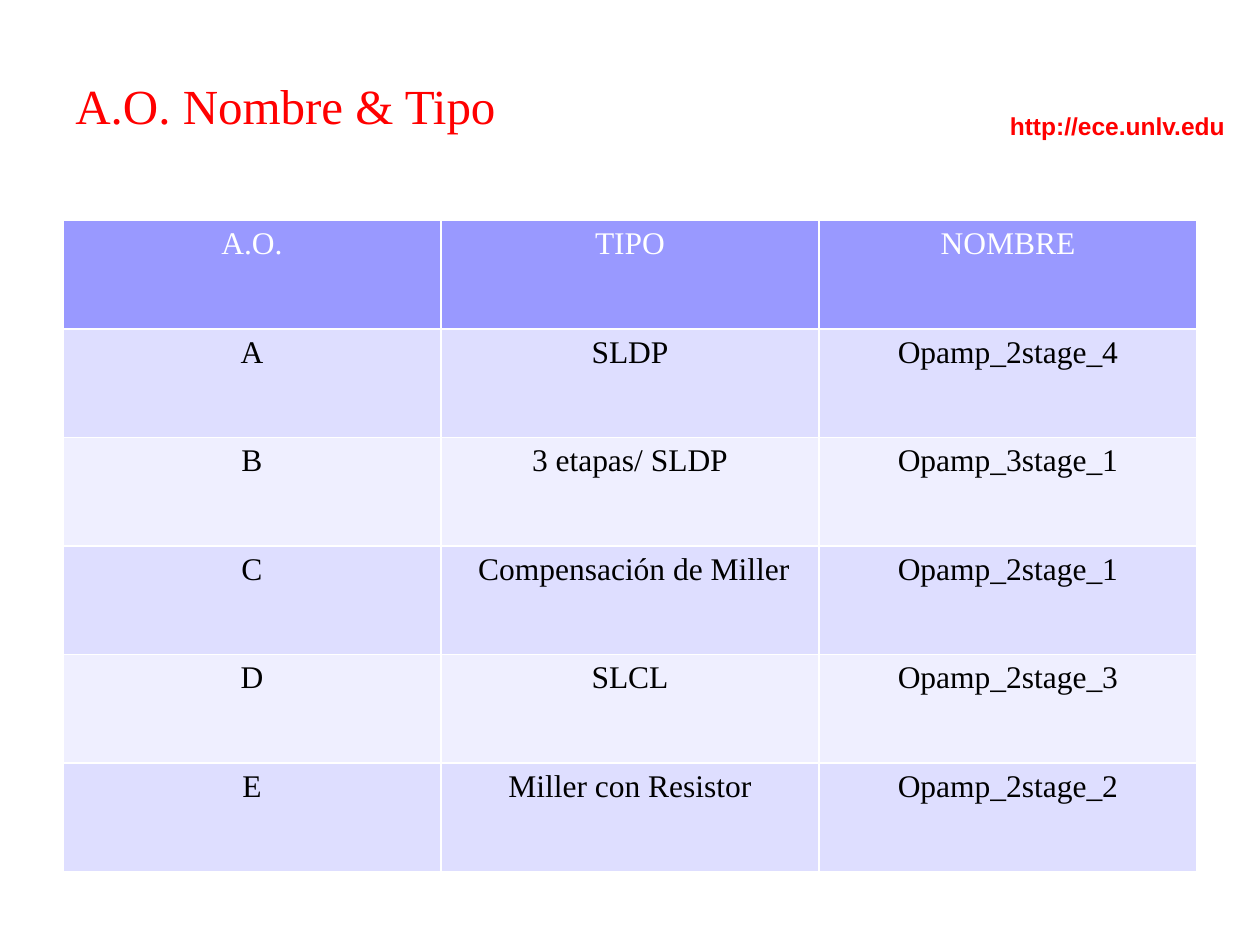
from pptx import Presentation
from pptx.dml.color import RGBColor
from pptx.enum import text
from pptx.util import Pt

RED = RGBColor(0xFF, 0x00, 0x00)
WHITE = RGBColor(0xFF, 0xFF, 0xFF)
BLACK = RGBColor(0x00, 0x00, 0x00)
HEAD = RGBColor(0x99, 0x99, 0xFF)
ODD = RGBColor(0xDE, 0xDE, 0xFF)
EVEN = RGBColor(0xEF, 0xEF, 0xFF)
SERIF = "Times New Roman"

ROWS = [
    ("A.O.", "TIPO", "NOMBRE"),
    ("A", "SLDP", "Opamp_2stage_4"),
    ("B", "3 etapas/ SLDP", "Opamp_3stage_1"),
    ("C", " Compensación de Miller", "Opamp_2stage_1"),
    ("D", "SLCL", "Opamp_2stage_3"),
    ("E", "Miller con Resistor", "Opamp_2stage_2"),
]


def style(par, font, size, color, bold=False):
    face = par.runs[0].font
    face.name, face.size, face.bold = font, Pt(size), bold
    face.color.rgb = color


def label(words, left, top, width, height, font, size, bold=False):
    box = slide.shapes.add_textbox(Pt(left), Pt(top), Pt(width), Pt(height))
    frame = box.text_frame
    frame.text = words
    frame.word_wrap = True
    frame.vertical_anchor = text.MSO_ANCHOR.MIDDLE
    style(frame.paragraphs[0], font, size, RED, bold)


deck = Presentation()
deck.slide_width, deck.slide_height = Pt(720), Pt(540)
slide = deck.slides.add_slide(deck.slide_layouts[6])

label("http://ece.unlv.edu", 570, 60, 140, 24, "Arial", 14, True)
label("A.O. Nombre & Tipo", 36, 36, 516, 48, SERIF, 28)

# The default table style supplies the white cell borders.
table = slide.shapes.add_table(
    len(ROWS), len(ROWS[0]), Pt(36), Pt(126), Pt(648), Pt(372)).table
for r, row in enumerate(ROWS):
    fill = HEAD if r == 0 else ODD if r % 2 else EVEN
    for c, words in enumerate(row):
        cell = table.cell(r, c)
        cell.fill.solid()
        cell.fill.fore_color.rgb = fill
        par = cell.text_frame.paragraphs[0]
        par.text = words
        par.alignment = text.PP_ALIGN.CENTER
        style(par, SERIF, 18, BLACK if r else WHITE)

deck.save("out.pptx")
